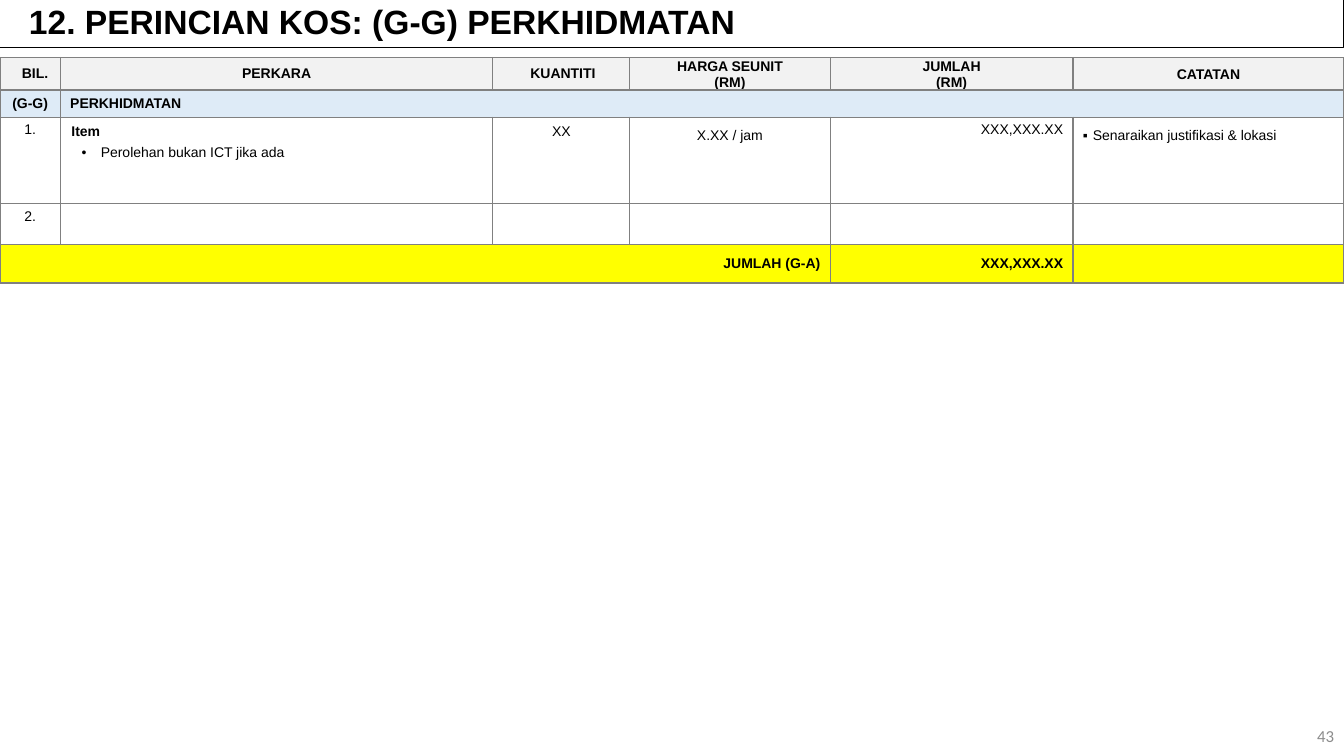
from dataclasses import dataclass

from lxml.etree import SubElement
from pptx import Presentation
from pptx.dml.color import RGBColor
from pptx.enum.shapes import MSO_SHAPE
from pptx.enum.text import MSO_ANCHOR as Anchor, PP_ALIGN as Align
from pptx.oxml.ns import qn
from pptx.table import Table, _Cell as Cell
from pptx.text.text import _Paragraph as Paragraph
from pptx.util import Cm, Pt

WIDTH, HEIGHT = 33.87, 19.05
COLUMN_WIDTHS = (1.52, 10.9, 3.45, 5.05, 6.12, 6.83)
ROW_HEIGHTS = (0.82, 0.65, 2.17, 1.03, 0.98)
BLACK, GREY, NUMBER_GREY = "000000", "808080", "8C8C8C"
HEADER_FILL, GROUP_FILL, TOTAL_FILL = "F2F2F2", "DEEBF7", "FFFF00"
DEFAULT_INSETS = (0.25, 0.13, 0.25, 0.13)
NO_INSETS = (0, 0, 0, 0)
THIN_INSETS = (0.03, 0.03, 0.03, 0)
EXACT = Pt(15.1)


@dataclass
class Line:
    text: str
    align: Align = Align.LEFT
    bold: bool = False
    margin: float = 0
    indent: float = 0
    bullet: str = ""
    spacing: Pt | float | None = None
    size: float = 10
    font: str = "Arial"
    color: str = BLACK


@dataclass
class Entry:
    row: int
    column: int
    lines: list[Line]
    insets: tuple[float, ...] = DEFAULT_INSETS


def rgb(value: str) -> RGBColor:
    return RGBColor.from_string(value)


def header(column: int, *texts: str, margin: float = 0) -> Entry:
    lines = [Line(text, Align.CENTER, True, margin) for text in texts]
    return Entry(0, column, lines, NO_INSETS if column < 3 else THIN_INSETS)


ENTRIES = [
    header(0, "BIL.", margin=0.25),
    header(1, "PERKARA"),
    header(2, "KUANTITI", margin=0.08),
    header(3, "HARGA SEUNIT", "(RM)"),
    header(4, "JUMLAH", "(RM)"),
    header(5, "CATATAN"),
    Entry(1, 0, [Line("(G-G)", Align.CENTER, True)]),
    Entry(1, 1, [Line("PERKHIDMATAN", bold=True)]),
    Entry(2, 0, [Line("1.", Align.CENTER)]),
    Entry(2, 1, [
        Line("Item", bold=True, margin=0.25, spacing=EXACT),
        Line("Perolehan bukan ICT jika ada", margin=0.99, indent=-0.48,
             bullet="•", spacing=EXACT),
    ], THIN_INSETS),
    Entry(2, 2, [Line("XX", Align.CENTER, spacing=EXACT)], THIN_INSETS),
    Entry(2, 3, [Line("X.XX / jam", Align.CENTER, spacing=EXACT)]),
    Entry(2, 4, [Line("XXX,XXX.XX", Align.RIGHT)]),
    Entry(2, 5, [Line("Senaraikan justifikasi & lokasi", margin=0.25,
                      indent=-0.25, bullet="▪", spacing=EXACT)]),
    Entry(3, 0, [Line("2.", Align.CENTER)]),
    Entry(4, 0, [Line("JUMLAH (G-A)", Align.RIGHT, True)]),
    Entry(4, 4, [Line("XXX,XXX.XX", Align.RIGHT, True)]),
]
ROW_FILLS = {0: HEADER_FILL, 1: GROUP_FILL, 4: TOTAL_FILL}
# The group row has no upright lines to the right of its first cell.
BORDER_SIDES = {(1, 1): "LTB", (1, 5): "RTB"}


def write_paragraph(paragraph: Paragraph, line: Line) -> None:
    paragraph.text = line.text
    paragraph.alignment = line.align
    properties = paragraph._p.get_or_add_pPr()
    properties.set("marL", str(Cm(line.margin)))
    properties.set("indent", str(Cm(line.indent)))
    if line.bullet:
        SubElement(properties, qn("a:buFont"), typeface="Arial")
        SubElement(properties, qn("a:buChar"), char=line.bullet)
    if line.spacing:
        paragraph.line_spacing = line.spacing
    font = paragraph.font
    font.name, font.size, font.bold = line.font, Pt(line.size), line.bold
    font.color.rgb = rgb(line.color)


def write_lines(frame, lines: list[Line]) -> None:
    for index, line in enumerate(lines):
        paragraph = frame.add_paragraph() if index else frame.paragraphs[0]
        write_paragraph(paragraph, line)


def draw_borders(cell: Cell, sides: str) -> None:
    properties = cell._tc.get_or_add_tcPr()
    for side in "LRTB":
        if side in sides:
            border = SubElement(properties, qn(f"a:ln{side}"), w=str(Pt(1)))
            fill = SubElement(border, qn("a:solidFill"))
            SubElement(fill, qn("a:srgbClr"), val=GREY)
        else:
            border = SubElement(properties, qn(f"a:ln{side}"), w="0")
            SubElement(border, qn("a:noFill"))


def style_cell(cell: Cell, row: int, column: int) -> None:
    sides = "TB" if cell.is_spanned else BORDER_SIDES.get((row, column), "LRTB")
    draw_borders(cell, sides)
    if row in ROW_FILLS:
        cell.fill.solid()
        cell.fill.fore_color.rgb = rgb(ROW_FILLS[row])
        cell.vertical_anchor = Anchor.MIDDLE
    else:
        cell.fill.background()
        cell.vertical_anchor = Anchor.TOP
    cell.text_frame.paragraphs[0].font.size = Pt(10)


def fill_cell(table: Table, entry: Entry) -> None:
    cell = table.cell(entry.row, entry.column)
    (cell.margin_left, cell.margin_top,
     cell.margin_right, cell.margin_bottom) = map(Cm, entry.insets)
    write_lines(cell.text_frame, entry.lines)


def add_cost_table(slide) -> None:
    table = slide.shapes.add_table(
        len(ROW_HEIGHTS), len(COLUMN_WIDTHS), Cm(0), Cm(1.45),
        Cm(WIDTH), Cm(sum(ROW_HEIGHTS))).table
    table.first_row = table.horz_banding = False
    for column, width in zip(table.columns, COLUMN_WIDTHS):
        column.width = Cm(width)
    for row, height in zip(table.rows, ROW_HEIGHTS):
        row.height = Cm(height)
    table.cell(1, 1).merge(table.cell(1, 4))
    table.cell(4, 0).merge(table.cell(4, 3))
    for row in range(len(ROW_HEIGHTS)):
        for column in range(len(COLUMN_WIDTHS)):
            style_cell(table.cell(row, column), row, column)
    for entry in ENTRIES:
        fill_cell(table, entry)


def add_title(slide) -> None:
    title = slide.shapes.add_shape(
        MSO_SHAPE.RECTANGLE, Cm(0), Cm(0), Cm(WIDTH), Cm(1.2))
    title.shadow.inherit = False
    title.fill.background()
    title.line.color.rgb = rgb(BLACK)
    title.line.width = Pt(0.75)
    title.text_frame.word_wrap = True
    title.text_frame.vertical_anchor = Anchor.MIDDLE
    write_lines(title.text_frame, [
        Line("12. PERINCIAN KOS: (G-G) PERKHIDMATAN", bold=True,
             margin=0.48, spacing=0.9, size=24)])


def add_page_number(slide) -> None:
    frame = slide.shapes.add_textbox(
        Cm(26.25), Cm(18.03), Cm(7.62), Cm(1.02)).text_frame
    frame.word_wrap = True
    frame.vertical_anchor = Anchor.MIDDLE
    write_lines(frame, [Line("43", Align.RIGHT, size=12, font="Calibri",
                             color=NUMBER_GREY)])


def main() -> None:
    presentation = Presentation()
    presentation.slide_width = Cm(WIDTH)
    presentation.slide_height = Cm(HEIGHT)
    slide = presentation.slides.add_slide(presentation.slide_layouts[6])
    add_title(slide)
    add_cost_table(slide)
    add_page_number(slide)
    presentation.save("out.pptx")


if __name__ == "__main__":
    main()
